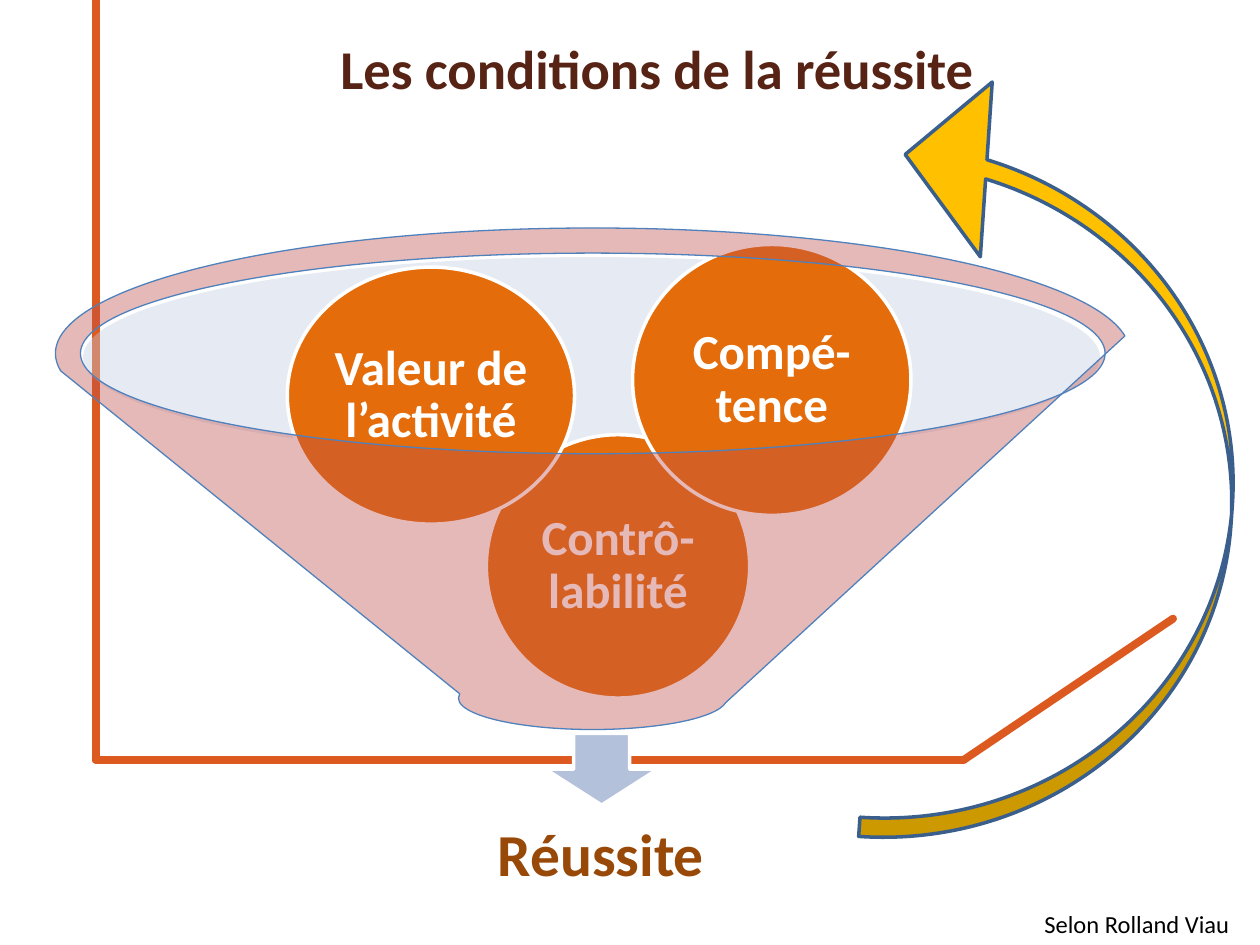
from lxml.etree import SubElement
from pptx import Presentation
from pptx.dml.color import RGBColor
from pptx.enum.shapes import MSO_CONNECTOR, MSO_SHAPE
from pptx.enum.text import MSO_ANCHOR, PP_ALIGN
from pptx.oxml.ns import qn
from pptx.util import Inches, Pt

FONT = "Calibri"
COLUMNS, ROWS = 100, 75
CELL = Inches(0.1)
WHITE = RGBColor(0xFF, 0xFF, 0xFF)
BLACK = RGBColor(0x00, 0x00, 0x00)
RUST = RGBColor(0xDC, 0x5A, 0x20)
ORANGE = RGBColor(0xE4, 0x6C, 0x0A)
GOLD = RGBColor(0xFF, 0xC0, 0x00)
NAVY = RGBColor(0x3A, 0x5F, 0x8C)
BLUE = RGBColor(0x4F, 0x81, 0xBD)
PALE_BLUE = RGBColor(0xC2, 0xCD, 0xE1)
GREY_BLUE = RGBColor(0xB3, 0xC1, 0xDB)
RED = RGBColor(0xC0, 0x50, 0x4D)
BROWN = RGBColor(0x98, 0x48, 0x07)
DARK_BROWN = RGBColor(0x57, 0x23, 0x14)


def grid(*cells):
    """Turn grid columns and rows into lengths."""
    return [round(c * CELL) for c in cells]


def add_frame_line(s, start, end):
    """Draw one round-capped line of the frame."""
    line = s.shapes.add_connector(MSO_CONNECTOR.STRAIGHT, *grid(*start, *end))
    line.line.color.rgb = RUST
    line.line.width = Pt(4.5)
    line.line._get_or_add_ln().set("cap", "rnd")
    SubElement(line._element.spPr, qn("a:effectLst"))


def add_figure(s, kind, box, fill, line=None, width=2, alpha=None):
    """Draw a preset shape with optional outline and opacity in percent."""
    sp = s.shapes.add_shape(kind, *grid(*box))
    sp.shadow.inherit = False
    sp.fill.solid()
    sp.fill.fore_color.rgb = fill
    if alpha:
        color = sp._element.spPr.find(qn("a:solidFill"))[0]
        SubElement(color, qn("a:alpha")).set("val", str(alpha * 1000))
    if line is None:
        sp.line.fill.background()
    else:
        sp.line.color.rgb = line
        sp.line.width = Pt(width)
    return sp


def write(sp, text, size, color, bold=True, align=PP_ALIGN.CENTER,
          spacing=None, inset=None):
    """Write one vertically centred paragraph into a shape."""
    tf = sp.text_frame
    tf.word_wrap = True
    tf.vertical_anchor = MSO_ANCHOR.MIDDLE
    if inset is not None:
        tf.margin_left = tf.margin_right = Inches(inset)
        tf.margin_top = tf.margin_bottom = Inches(inset)
    p = tf.paragraphs[0]
    p.alignment = align
    if spacing:
        p.line_spacing = spacing
    r = p.add_run()
    r.text = text
    r.font.name = FONT
    r.font.size = Pt(size)
    r.font.bold = bold
    r.font.color.rgb = color


def add_label(s, box, text, size, color, **style):
    """Add a text box."""
    write(s.shapes.add_textbox(*grid(*box)), text, size, color, **style)


def add_ball(s, box, text):
    """Add a labelled ball that falls into the funnel."""
    sp = add_figure(s, MSO_SHAPE.OVAL, box, ORANGE, WHITE)
    write(sp, text, 28, WHITE, spacing=0.9, inset=0.04)


def add_return_arrow(s):
    """Add the curved arrow from the result back to the title."""
    sp = add_figure(s, MSO_SHAPE.CURVED_LEFT_ARROW, (70.2, 6.2, 27.8, 61.2),
                    GOLD, NAVY)
    for i, value in enumerate((0.055, 0.5, 0.234)):
        sp.adjustments[i] = value
    sp.rotation = 3.9
    sp._element.spPr.find(qn("a:xfrm")).set("flipV", "1")


def main():
    """Build and save the slide."""
    prs = Presentation()
    prs.slide_width, prs.slide_height = grid(COLUMNS, ROWS)
    s = prs.slides.add_slide(prs.slide_layouts[6])

    corners = [(7.6, 0), (7.6, 60.3), (76.5, 60.3), (93.1, 49.1)]
    for start, end in zip(corners, corners[1:]):
        add_frame_line(s, start, end)

    add_label(s, (81.9, 71.6, 18.1, 3.4), "Selon Rolland Viau", 14, BLACK,
              bold=False, align=PP_ALIGN.LEFT)
    add_figure(s, MSO_SHAPE.OVAL, (6.6, 20.4, 80.7, 15.9), PALE_BLUE, alpha=40)
    add_figure(s, MSO_SHAPE.DOWN_ARROW, (43.3, 58.2, 8.9, 5.7),
               GREY_BLUE, WHITE)
    add_label(s, (26.4, 62.7, 42.6, 10.7), "Réussite", 34, BROWN,
              spacing=0.9, inset=0.26)

    add_ball(s, (38.6, 34.5, 20.9, 20.9), "Contrô-labilité")
    add_ball(s, (22.8, 21.2, 22.8, 20.4), "Valeur de l’activité")
    add_ball(s, (50.2, 19.4, 22.1, 21.5), "Compé-tence")

    add_figure(s, MSO_SHAPE.FUNNEL, (4.4, 18.1, 85.3, 39.8), RED, BLUE,
               width=0.75, alpha=40)
    add_return_arrow(s)
    add_label(s, (20.6, 0, 63.1, 10.7), "Les conditions de la réussite",
              31.2, DARK_BROWN)
    prs.save("out.pptx")


if __name__ == "__main__":
    main()
